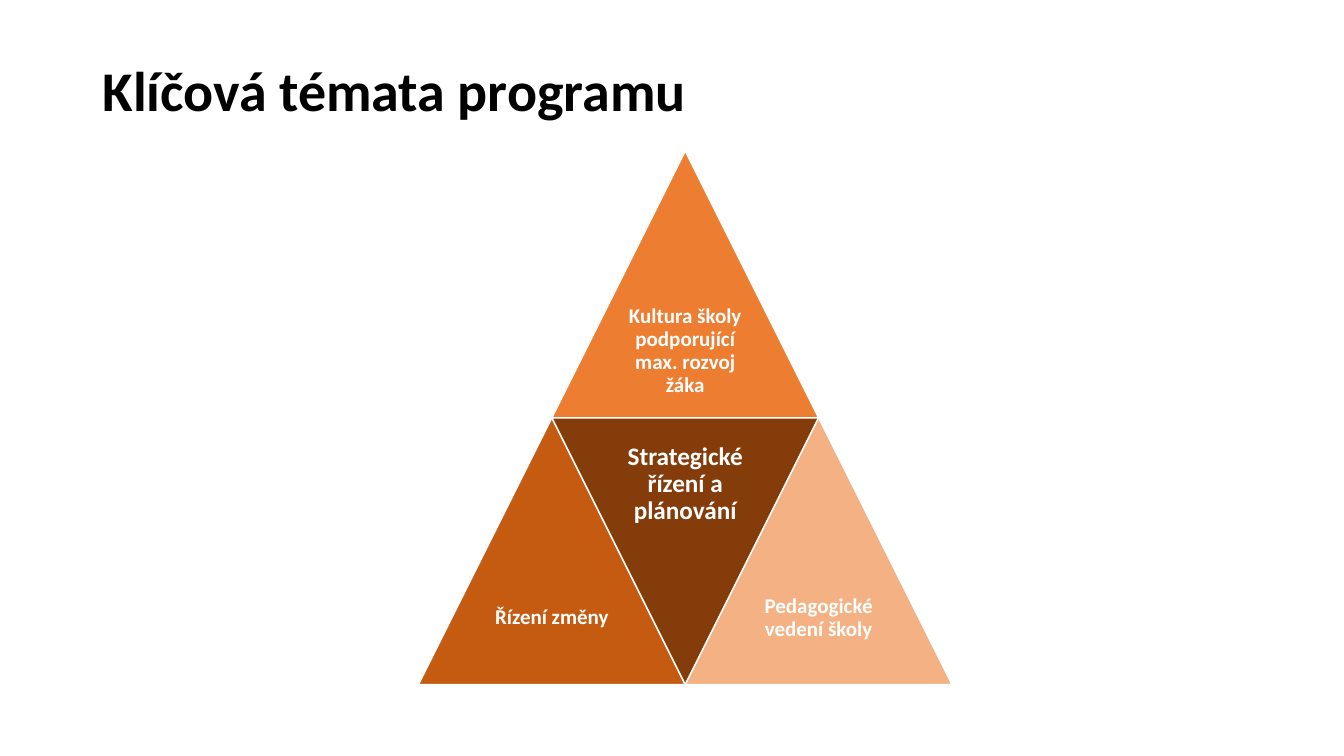
from pptx import Presentation
from pptx.dml.color import RGBColor
from pptx.enum.shapes import MSO_SHAPE
from pptx.enum.text import MSO_ANCHOR, PP_ALIGN
from pptx.util import Pt

BLACK = RGBColor(0x00, 0x00, 0x00)
WHITE = RGBColor(0xFF, 0xFF, 0xFF)
ORANGE = RGBColor(0xED, 0x7D, 0x31)
RUST = RGBColor(0xC5, 0x5A, 0x11)
BROWN = RGBColor(0x84, 0x3C, 0x0B)
PEACH = RGBColor(0xF4, 0xB1, 0x83)

LEFT, TOP, SIDE = 299, 108, 190.5
HALF = SIDE / 2


def set_font(p, size, color):
    p.line_spacing = 0.9
    p.font.name = "Calibri"
    p.font.size = Pt(size)
    p.font.bold = True
    p.font.color.rgb = color


prs = Presentation()
prs.slide_width, prs.slide_height = Pt(960), Pt(540)
slide = prs.slides.add_slide(prs.slide_layouts[5])

title = slide.shapes.title
title.left, title.top, title.width, title.height = Pt(66), Pt(14.4), Pt(828), Pt(104.4)
tf = title.text_frame
tf.text = "Klíčová témata programu"
tf.vertical_anchor = MSO_ANCHOR.MIDDLE
tf.paragraphs[0].alignment = PP_ALIGN.LEFT
set_font(tf.paragraphs[0], 40, BLACK)

# text, column in half sides, row, fill, font size, inset, rotation
triangles = [
    ("Kultura školy podporující max. rozvoj žáka", 1, 0, ORANGE, 15, 4.5, 0),
    ("Řízení změny", 0, 1, RUST, 15, 4.5, 0),
    ("Strategické řízení a plánování", 1, 1, BROWN, 18, 5.4, 180),
    ("Pedagogické vedení školy", 2, 1, PEACH, 15, 4.5, 0),
]
for text, col, row, fill, size, inset, rotation in triangles:
    x, y = LEFT + col * HALF, TOP + row * SIDE
    sp = slide.shapes.add_shape(MSO_SHAPE.ISOSCELES_TRIANGLE, Pt(x), Pt(y), Pt(SIDE), Pt(SIDE))
    sp.rotation = rotation
    sp.shadow.inherit = False
    sp.fill.solid()
    sp.fill.fore_color.rgb = fill
    sp.line.color.rgb = WHITE
    sp.line.width = Pt(1)

    # The label fills the square beside the base of its triangle
    label_y = y if rotation else y + HALF
    label = slide.shapes.add_textbox(Pt(x + HALF / 2), Pt(label_y), Pt(HALF), Pt(HALF))
    tf = label.text_frame
    tf.word_wrap = True
    tf.vertical_anchor = MSO_ANCHOR.MIDDLE
    tf.margin_left = tf.margin_right = tf.margin_top = tf.margin_bottom = Pt(inset)
    p = tf.paragraphs[0]
    p.text = text
    p.alignment = PP_ALIGN.CENTER
    set_font(p, size, WHITE)

prs.save("out.pptx")
